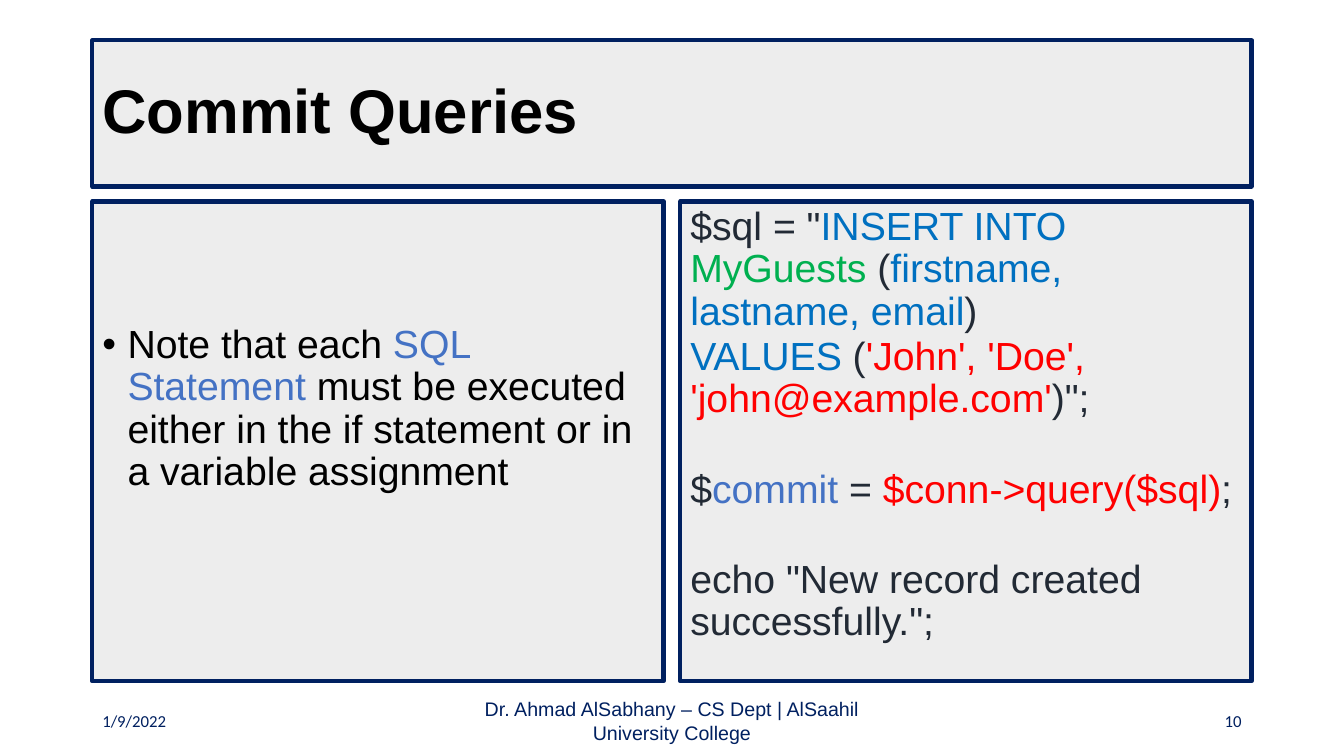
from lxml import etree
from pptx import Presentation
from pptx.dml.color import RGBColor
from pptx.enum.shapes import MSO_SHAPE
from pptx.enum.text import MSO_ANCHOR, PP_ALIGN
from pptx.oxml.ns import qn
from pptx.util import Pt

RECT = MSO_SHAPE.RECTANGLE
TOP, MIDDLE = MSO_ANCHOR.TOP, MSO_ANCHOR.MIDDLE
LEFT, CENTER, RIGHT = PP_ALIGN.LEFT, PP_ALIGN.CENTER, PP_ALIGN.RIGHT
COLORS = {
    "panel": "EDEDED", "navy": "002060", "black": "000000", "slate": "222A35",
    "accent": "4472C4", "blue": "0070C0", "green": "00B050", "red": "FF0000",
}
MARGIN, WIDTH, GAP = 66, 828, 12
COLUMN = (WIDTH - GAP) / 2


def add_panel(x, y, w, h, anchor):
    """Add a framed grey box and return its text frame."""
    sp = slide.shapes.add_shape(RECT, Pt(x), Pt(y), Pt(w), Pt(h))
    sp.shadow.inherit = False
    sp.fill.solid()
    sp.fill.fore_color.rgb = RGBColor.from_string(COLORS["panel"])
    sp.line.color.rgb = RGBColor.from_string(COLORS["navy"])
    sp.line.width = Pt(3)
    tf = sp.text_frame
    tf.word_wrap = True
    tf.vertical_anchor = anchor
    return tf


def add_runs(p, runs, size, align=LEFT, font="Arial", bold=False):
    p.alignment = align
    for text, color in runs:
        r = p.add_run()
        r.text = text
        r.font.name = font
        r.font.size = Pt(size)
        r.font.bold = bold
        r.font.color.rgb = RGBColor.from_string(COLORS[color])


prs = Presentation()
prs.slide_width, prs.slide_height = Pt(960), Pt(540)
slide = prs.slides.add_slide(prs.slide_layouts[6])

# Title
tf = add_panel(MARGIN, 28.8, WIDTH, 104.4, MIDDLE)
p = tf.paragraphs[0]
p.line_spacing = 0.9
add_runs(p, [("Commit Queries", "black")], 44, bold=True)

# Note on the left
tf = add_panel(MARGIN, 144, COLUMN, 342.7, TOP)
tf.margin_top = Pt(88)
p = tf.paragraphs[0]
p.line_spacing = 0.9
p.space_before = Pt(2)
add_runs(p, [
    ("Note that each ", "black"),
    ("SQL Statement", "accent"),
    (" must be executed either in the if statement or in a variable assignment", "black"),
], 28)
pPr = p._p.get_or_add_pPr()
pPr.set("marL", str(Pt(18)))
pPr.set("indent", str(-Pt(18)))
etree.SubElement(pPr, qn("a:buFont")).set("typeface", "Arial")
etree.SubElement(pPr, qn("a:buChar")).set("char", "•")

# Code on the right: space before each statement, then its coloured runs
code = [
    (2, [("$sql = \"", "slate"), ("INSERT INTO ", "blue"), ("MyGuests", "green"),
         (" (", "slate"), ("firstname, lastname, email", "blue"), (")", "slate")]),
    (2, [("VALUES", "blue"), (" (", "slate"),
         ("'John', 'Doe', 'john@example.com'", "red"), (")\";", "slate")]),
    (34.4, [("$", "slate"), ("commit", "accent"), (" = ", "slate"),
            ("$conn->query($sql)", "red"), (";", "slate")]),
    (34.4, [("echo \"New record created successfully.\";", "slate")]),
]
tf = add_panel(MARGIN + COLUMN + GAP, 144, COLUMN, 342.7, TOP)
for i, (space, runs) in enumerate(code):
    p = tf.add_paragraph() if i else tf.paragraphs[0]
    p.line_spacing = 0.9
    p.space_before = Pt(space)
    add_runs(p, runs, 28)

# Footer
footer = [
    (MARGIN, 216, "1/9/2022", 12, LEFT, "Calibri"),
    (318, 324, "Dr. Ahmad AlSabhany – CS Dept | AlSaahil University College", 14, CENTER, "Arial"),
    (678, 216, "10", 12, RIGHT, "Calibri"),
]
for x, w, text, size, align, font in footer:
    tf = slide.shapes.add_textbox(Pt(x), Pt(500.5), Pt(w), Pt(28.8)).text_frame
    tf.word_wrap = True
    tf.vertical_anchor = MIDDLE
    add_runs(tf.paragraphs[0], [(text, "navy")], size, align, font)

prs.save("out.pptx")
